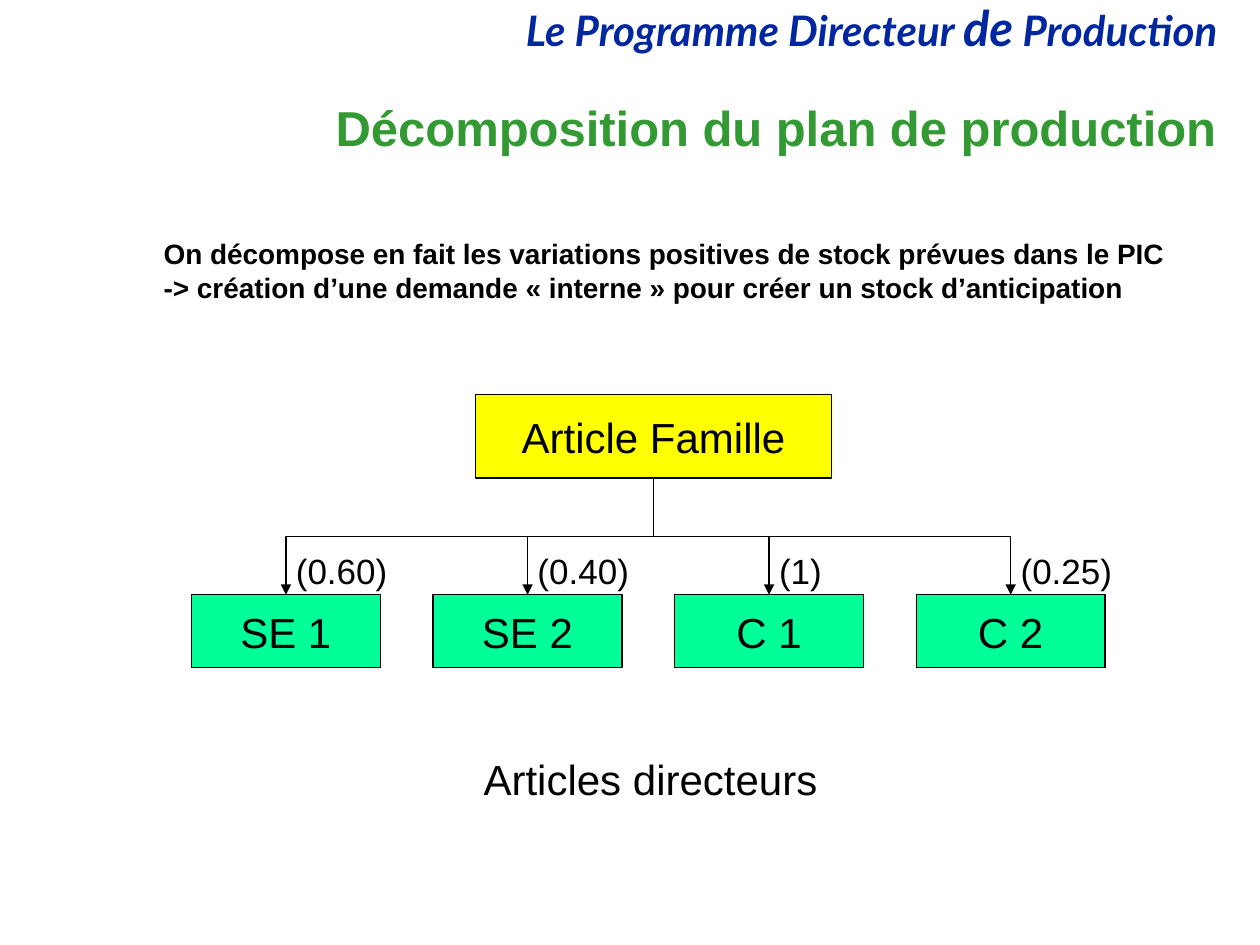
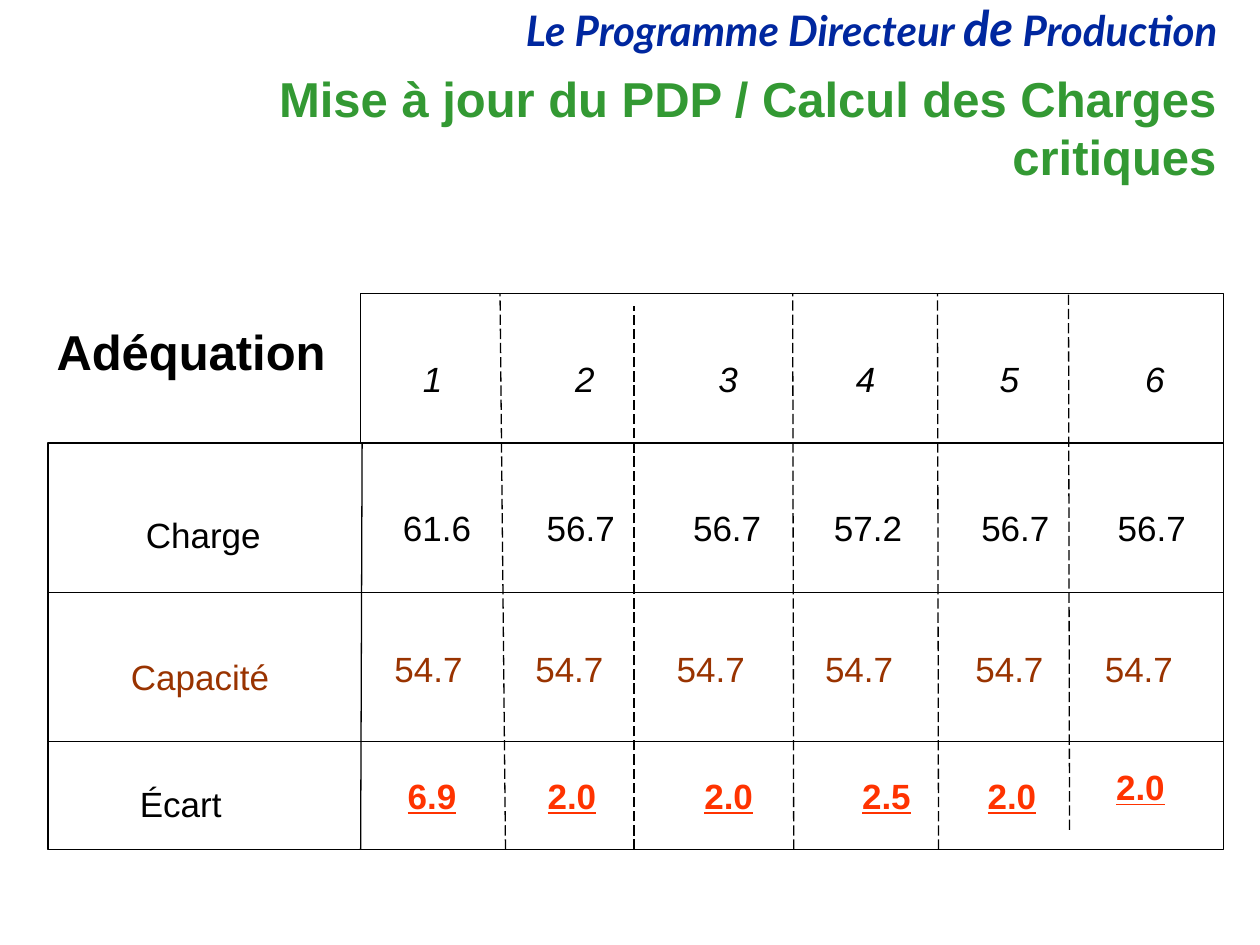
from collections import namedtuple
from dataclasses import dataclass

from lxml import etree
from pptx import Presentation
from pptx.dml.color import RGBColor
from pptx.enum import dml, shapes, text
from pptx.oxml import ns
from pptx.util import Cm, Pt

Box = namedtuple("Box", "left top width height")
Row = namedtuple("Row", "label indent top width values centers color style")


@dataclass(frozen=True)
class Theme:
    font: str = "Arial"
    banner_font: str = "Lato"
    banner: str = "00279F"
    title: str = "339933"
    ink: str = "000000"
    family: str = "FFFF00"
    item: str = "00FF99"
    capacity: str = "993300"
    gap: str = "FF3300"
    title_size: int = 28
    large: int = 24
    body: int = 20
    small: int = 16
    line: float = 0.75


THEME = Theme()
BANNER = Box(4.27, -0.05, 20.52, 1.32)


def inside(box, left, top, width, height):
    return Box(box.left + left, box.top + top, width, height)


def lengths(box):
    return [Cm(value) for value in box]


def write(frame, content, *, size=THEME.body, color=THEME.ink, font=THEME.font,
          align=text.PP_ALIGN.LEFT, anchor=text.MSO_ANCHOR.TOP, wrap=True,
          spacing=None, bold=False, italic=False, underline=False):
    frame.word_wrap = wrap
    frame.vertical_anchor = anchor
    for index, line in enumerate(content.split("\n")):
        paragraph = frame.paragraphs[0] if index == 0 else frame.add_paragraph()
        paragraph.alignment = align
        if spacing:
            paragraph.line_spacing = spacing
        add_run(paragraph, line, size, color, font, bold, italic, underline)
    return frame


def add_run(paragraph, content, size, color, font, bold=False, italic=False, underline=False):
    run = paragraph.add_run()
    run.text = content
    run.font.name = font
    run.font.size = Pt(size)
    run.font.color.rgb = RGBColor.from_string(color)
    run.font.bold, run.font.italic, run.font.underline = bold, italic, underline


def add_text(slide, box, content, **style):
    return write(slide.shapes.add_textbox(*lengths(box)).text_frame, content, **style)


def add_rectangle(slide, box, fill=None):
    rectangle = slide.shapes.add_shape(shapes.MSO_SHAPE.RECTANGLE, *lengths(box))
    rectangle.shadow.inherit = False
    if fill:
        rectangle.fill.solid()
        rectangle.fill.fore_color.rgb = RGBColor.from_string(fill)
    else:
        rectangle.fill.background()
    rectangle.line.color.rgb = RGBColor.from_string(THEME.ink)
    rectangle.line.width = Pt(THEME.line)
    return rectangle


def add_line(slide, x1, y1, x2, y2, kind=shapes.MSO_CONNECTOR.STRAIGHT, dash=None):
    line = slide.shapes.add_connector(kind, Cm(x1), Cm(y1), Cm(x2), Cm(y2))
    line.line.color.rgb = RGBColor.from_string(THEME.ink)
    line.line.width = Pt(THEME.line)
    if dash:
        line.line.dash_style = dash
    etree.SubElement(line._element.spPr, ns.qn("a:effectLst"))
    return line


def add_branch(slide, x1, y1, x2, y2):
    middle_x, middle_y = (x1 + x2) / 2, (y1 + y2) / 2
    half_drop, half_span = (y2 - y1) / 2, abs(x2 - x1) / 2
    side = 1 if x2 < x1 else -1
    branch = add_line(slide, middle_x - side * half_drop, middle_y - half_span,
                      middle_x + side * half_drop, middle_y + half_span,
                      kind=shapes.MSO_CONNECTOR.ELBOW)
    branch._element.spPr.xfrm.rot = 90 if side == 1 else 270
    etree.SubElement(branch.line._get_or_add_ln(), ns.qn("a:tailEnd"), type="triangle")


def add_item(slide, box, name, fill):
    write(add_rectangle(slide, box, fill).text_frame, name, size=THEME.large,
          align=text.PP_ALIGN.CENTER, anchor=text.MSO_ANCHOR.MIDDLE, wrap=False)


def start_slide(deck, title, box):
    slide = deck.slides.add_slide(deck.slide_layouts[6])
    look = dict(color=THEME.banner, font=THEME.banner_font, bold=True, italic=True)
    banner = add_text(slide, BANNER, "Le Programme Directeur ", size=THEME.large,
                      align=text.PP_ALIGN.RIGHT, spacing=0.9, **look)
    add_run(banner.paragraphs[0], "de", THEME.title_size, **look)
    add_run(banner.paragraphs[0], " Production", THEME.large, **look)
    add_text(slide, box, title, size=THEME.title_size, color=THEME.title, bold=True,
             align=text.PP_ALIGN.RIGHT, anchor=text.MSO_ANCHOR.MIDDLE)
    return slide


def draw_family_tree(slide, box, family, items):
    family_box = inside(box, 5.72, 0, 7.19, 1.69)
    add_item(slide, family_box, family, THEME.family)
    item_width, item_height = 3.81, 1.47
    item_top = box.height - item_height
    pitch = (box.width - item_width) / (len(items) - 1)
    for index, (name, ratio, ratio_width) in enumerate(items):
        item = inside(box, index * pitch, item_top, item_width, item_height)
        center = item.left + item_width / 2
        add_item(slide, item, name, THEME.item)
        add_branch(slide, family_box.left + family_box.width / 2,
                   family_box.top + family_box.height, center, item.top)
        add_text(slide, Box(center - 0.05, item.top - 1.04, ratio_width, 1.09), ratio, wrap=False)


def draw_load_grid(slide, box, heading, rows):
    label_width, row_height = 6.3, 3.01
    add_rectangle(slide, inside(box, 0, row_height, box.width, box.height - row_height))
    add_rectangle(slide, inside(box, label_width, 0, box.width - label_width, row_height))
    right, bottom = box.left + box.width, box.top + box.height
    for index in (2, 3):
        y = box.top + index * row_height
        add_line(slide, box.left, y, right, y)
    edge = box.left + label_width
    add_line(slide, edge, bottom, edge + 0.03, box.top + row_height)
    dividers = [(9.22, 9.11, 0, 0), (11.81, 11.81, 0.25, 0), (15.03, 15.01, 0, 0),
                (17.95, 17.93, 0, 0), (20.59, 20.57, 0, 0.4)]
    for low_x, high_x, top_cut, bottom_cut in dividers:
        add_line(slide, box.left + low_x, bottom - bottom_cut, box.left + high_x,
                 box.top + top_cut, dash=dml.MSO_LINE.LONG_DASH)
    add_text(slide, inside(box, -0.08, 0.43, 6.96, 1.45), heading,
             size=THEME.title_size, bold=True)
    for row in rows:
        draw_row(slide, box, row)


def draw_row(slide, box, row):
    height = 2.24
    if row.label:
        label_color = THEME.ink if row.color == THEME.gap else row.color
        add_text(slide, inside(box, row.indent, row.top + 0.15, 6.02, height), row.label,
                 color=label_color)
    for value, center in zip(row.values, row.centers):
        raised = 0.18 if row.color == THEME.gap and center == row.centers[-1] else 0
        add_text(slide, inside(box, center - row.width / 2, row.top - raised, row.width, height),
                 value, color=row.color, align=text.PP_ALIGN.CENTER, **row.style)


def build_decomposition(deck):
    slide = start_slide(deck, "Décomposition du plan de production", Box(3.61, 1.7, 21.16, 1.7))
    draw_family_tree(slide, Box(3.86, 7.95, 18.42, 5.51), "Article Famille",
                     [("SE 1", "(0.60)", 2.36), ("SE 2", "(0.40)", 2.36),
                      ("C 1", "(1)", 1.37), ("C 2", "(0.25)", 2.36)])
    add_text(slide, Box(9.5, 15.06, 7.24, 1.27), "Articles directeurs",
             size=THEME.large, wrap=False)
    add_text(slide, Box(3.05, 4.65, 20.75, 1.63),
             "On décompose en fait les variations positives de stock prévues dans le PIC\n"
             "-> création d’une demande « interne » pour créer un stock d’anticipation",
             size=THEME.small, bold=True, wrap=False)


def build_load_check(deck):
    slide = start_slide(deck, "Mise à jour du PDP / Calcul des Charges critiques",
                        Box(2.49, 1.47, 22.28, 2.18))
    rows = [
        Row("", 0, 1.17, 2.8, "123456",
            [7.75, 10.82, 13.71, 16.48, 19.38, 22.31], THEME.ink, dict(italic=True)),
        Row("Charge", 1.72, 4.16, 3.1, ["61.6", "56.7", "56.7", "57.2", "56.7", "56.7"],
            [7.84, 10.74, 13.69, 16.53, 19.5, 22.25], THEME.ink, {}),
        Row("Capacité", 1.42, 7.01, 3.1, ["54.7"] * 6,
            [7.67, 10.51, 13.36, 16.35, 19.38, 21.99], THEME.capacity, {}),
        Row("Écart", 1.6, 9.57, 3.55, ["6.9", "2.0", "2.0", "2.5", "2.0", "2.0"],
            [7.74, 10.56, 13.72, 16.9, 19.43, 22.02], THEME.gap,
            dict(bold=True, underline=True)),
    ]
    draw_load_grid(slide, Box(0.97, 5.92, 23.7, 11.21), "Adéquation", rows)


def main():
    deck = Presentation()
    deck.slide_width, deck.slide_height = Cm(25.4), Cm(19.05)
    build_decomposition(deck)
    build_load_check(deck)
    deck.save("out.pptx")


if __name__ == "__main__":
    main()
